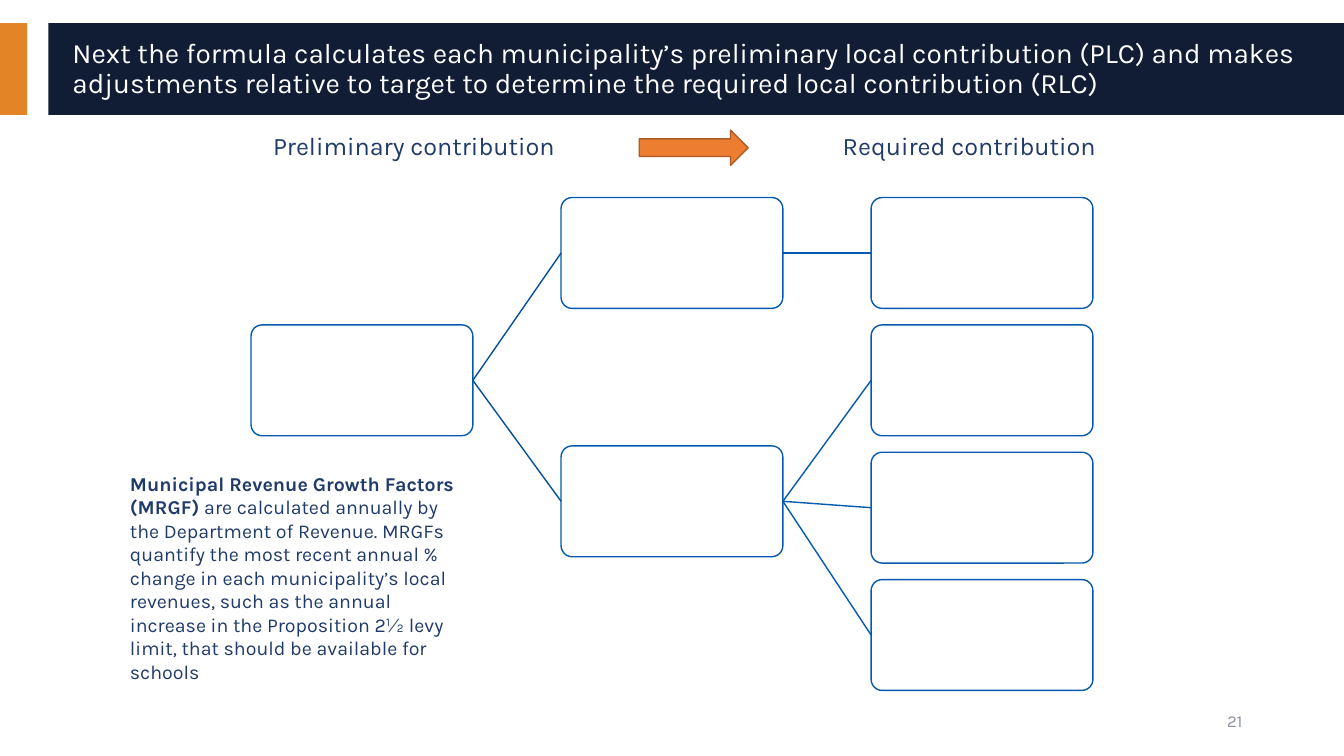
from collections import namedtuple
from dataclasses import dataclass

from lxml import etree
from pptx import Presentation
from pptx.dml.color import RGBColor
from pptx.enum import shapes, text
from pptx.oxml import ns
from pptx.util import Inches, Pt

Box = namedtuple("Box", "left top width height")


@dataclass(frozen=True)
class Theme:
    font: str = "Karla"
    white: str = "FFFFFF"
    navy: str = "101D35"
    orange: str = "E38526"
    ink: str = "203B6A"
    grey: str = "8D92A1"
    node_line: str = "055AAF"
    branch_line: str = "044F9B"
    arrow: str = "ED7D31"
    arrow_line: str = "AF5C24"
    title_size: int = 20
    heading_size: int = 18
    note_size: int = 14
    number_size: int = 12


THEME = Theme()
SLIDE_WIDTH, SLIDE_HEIGHT = 13.33, 7.5
NODE_WIDTH, NODE_HEIGHT = 2.2, 1.1

# Column and row of each node; the lower middle one sits just above row 2.
NODES = {
    "start": (0, 1),
    "above": (1, 0),
    "below": (1, 1.95),
    "above result": (2, 0),
    "below result 1": (2, 1),
    "below result 2": (2, 2),
    "below result 3": (2, 3),
}
BRANCHES = [
    ("start", "above"),
    ("start", "below"),
    ("above", "above result"),
    ("below", "below result 1"),
    ("below", "below result 2"),
    ("below", "below result 3"),
]
RIGHT_SITE, LEFT_SITE = 3, 1

TITLE = (
    "Next the formula calculates each municipality’s preliminary local contribution (PLC) "
    "and makes adjustments relative to target to determine the required local contribution (RLC)"
)
NOTE_TERM = "Municipal Revenue Growth Factors (MRGF)"
NOTE = (
    " are calculated annually by the Department of Revenue. MRGFs quantify the most recent "
    "annual % change in each municipality’s local revenues, such as the annual increase in "
    "the Proposition 2½ levy limit, that should be available for schools"
)


def add_block(slide, kind, box, fill, line=None):
    shape = slide.shapes.add_shape(kind, *map(Inches, box))
    shape.shadow.inherit = False
    shape.fill.solid()
    shape.fill.fore_color.rgb = RGBColor.from_string(fill)
    if line:
        shape.line.color.rgb = RGBColor.from_string(line)
        shape.line.width = Pt(1)
    else:
        shape.line.fill.background()
    return shape


def add_text(slide, box, words, size, color, anchor=text.MSO_ANCHOR.TOP):
    """Place one wrapped paragraph and return it."""
    frame = slide.shapes.add_textbox(*map(Inches, box)).text_frame
    frame.word_wrap = True
    frame.vertical_anchor = anchor
    paragraph = frame.paragraphs[0]
    paragraph.add_run().text = words
    paragraph.font.name = THEME.font
    paragraph.font.size = Pt(size)
    paragraph.font.color.rgb = RGBColor.from_string(color)
    return paragraph


def add_branch(slide, source, target, color):
    line = slide.shapes.add_connector(shapes.MSO_CONNECTOR.STRAIGHT, 0, 0, 0, 0)
    line.begin_connect(source, RIGHT_SITE)
    line.end_connect(target, LEFT_SITE)
    line.line.color.rgb = RGBColor.from_string(color)
    line.line.width = Pt(1)
    etree.SubElement(line._element.spPr, ns.qn("a:effectLst"))


def add_title_band(slide, box):
    rectangle = shapes.MSO_SHAPE.RECTANGLE
    add_block(slide, rectangle, box._replace(width=0.27), THEME.orange)
    band = box._replace(left=box.left + 0.48, width=box.width - 0.48)
    add_block(slide, rectangle, band, THEME.navy)
    title_box = Box(box.left + 0.62, box.top + 0.09, 12.44, box.height - 0.17)
    title = add_text(slide, title_box, TITLE, THEME.title_size, THEME.white,
                     text.MSO_ANCHOR.MIDDLE)
    title.line_spacing = 0.9


def add_headings(slide, box):
    headings = {"Preliminary contribution": 0, "Required contribution": 5.65}
    for words, offset in headings.items():
        add_text(slide, Box(box.left + offset, box.top, 3.2, box.height), words,
                 THEME.heading_size, THEME.ink)
    arrow_box = Box(box.left + 3.73, box.top + 0.05, 1.08, 0.35)
    add_block(slide, shapes.MSO_SHAPE.RIGHT_ARROW, arrow_box, THEME.arrow, THEME.arrow_line)


def add_tree(slide, box):
    column_step = (box.width - NODE_WIDTH) / 2
    row_step = (box.height - NODE_HEIGHT) / 3
    nodes = {}
    for name, (column, row) in NODES.items():
        node_box = Box(box.left + column * column_step, box.top + row * row_step,
                       NODE_WIDTH, NODE_HEIGHT)
        node = add_block(slide, shapes.MSO_SHAPE.ROUNDED_RECTANGLE, node_box,
                         THEME.white, THEME.node_line)
        node.adjustments[0] = 0.1
        nodes[name] = node
    for source, target in BRANCHES:
        color = THEME.branch_line if source == "start" else THEME.node_line
        add_branch(slide, nodes[source], nodes[target], color)


def add_note(slide, box):
    note = add_text(slide, box, NOTE_TERM, THEME.note_size, THEME.ink)
    note.runs[0].font.bold = True
    note.add_run().text = NOTE


def add_page_number(slide, box):
    number = add_text(slide, box, "21", THEME.number_size, THEME.grey, text.MSO_ANCHOR.MIDDLE)
    number.alignment = text.PP_ALIGN.RIGHT


def main():
    presentation = Presentation()
    presentation.slide_width = Inches(SLIDE_WIDTH)
    presentation.slide_height = Inches(SLIDE_HEIGHT)
    slide = presentation.slides.add_slide(presentation.slide_layouts[6])
    add_title_band(slide, Box(0, 0.23, SLIDE_WIDTH, 0.91))
    add_tree(slide, Box(2.49, 1.96, 8.35, 4.89))
    add_note(slide, Box(1.19, 4.63, 3.58, 1.99))
    add_headings(slide, Box(2.61, 1.24, 8.44, 0.4))
    add_page_number(slide, Box(9.42, 6.95, 3, 0.4))
    presentation.save("out.pptx")


if __name__ == "__main__":
    main()
